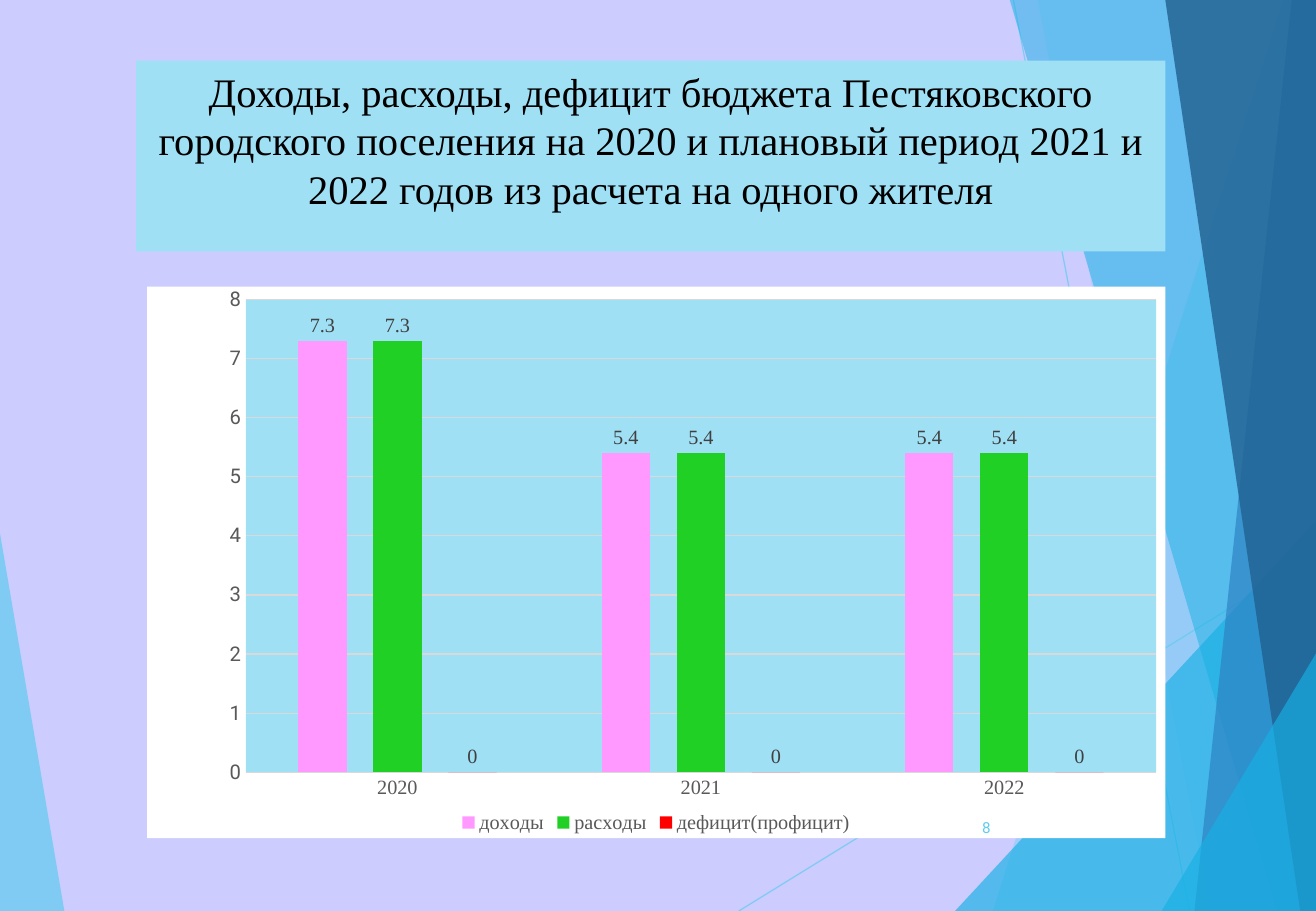
"""Build the slide on income, spending and deficit per resident."""
import lxml.etree
import pptx
import pptx.chart.data
import pptx.dml.color
import pptx.enum.chart
import pptx.enum.shapes
import pptx.enum.text
import pptx.oxml
import pptx.oxml.ns
import pptx.util

Inches = pptx.util.Inches
Pt = pptx.util.Pt
RGBColor = pptx.dml.color.RGBColor
qn = pptx.oxml.ns.qn

LAVENDER = RGBColor(0xCC, 0xCC, 0xFF)
SKY = RGBColor(0x5F, 0xCB, 0xEF)
CYAN = RGBColor(0x17, 0xB0, 0xE4)
BLUE = RGBColor(0x2E, 0x83, 0xC3)
NAVY = RGBColor(0x22, 0x62, 0x92)
PALE = RGBColor(0x9F, 0xE0, 0xF5)
PINK = RGBColor(0xFF, 0x99, 0xFF)
GREEN = RGBColor(0x20, 0xD0, 0x24)
RED = RGBColor(0xFF, 0x00, 0x00)
BLACK = RGBColor(0x00, 0x00, 0x00)
WHITE = RGBColor(0xFF, 0xFF, 0xFF)
DARK_GRAY = RGBColor(0x40, 0x40, 0x40)
GRAY = RGBColor(0x59, 0x59, 0x59)
LIGHT_GRAY = RGBColor(0xD9, 0xD9, 0xD9)
SERIF = "Times New Roman"
SANS = "Roboto"
WIDTH, HEIGHT = 10.83, 7.5


def set_font(font, name, size, color):
    for key, value in {"name": name, "size": Pt(size)}.items():
        setattr(font, key, value)
    font.color.rgb = color


def set_opacity(shape, percent):
    for color in shape.element.spPr.iter(qn("a:srgbClr")):
        lxml.etree.SubElement(color, qn("a:alpha")).set("val", str(percent * 1000))


deck = pptx.Presentation()
deck.slide_width = Inches(WIDTH)
deck.slide_height = Inches(HEIGHT)
page = deck.slides.add_slide(deck.slide_layouts[5])
page.background.fill.solid()
page.background.fill.fore_color.rgb = LAVENDER

rays = [((6.08, HEIGHT), (WIDTH, 4.57)), ((8.34, 0), (9.79, HEIGHT))]
for start, end in rays:
    ray = page.shapes.add_connector(
        pptx.enum.shapes.MSO_CONNECTOR.STRAIGHT,
        *[Inches(value) for value in start + end],
    )
    ray.line.color.rgb = SKY
    ray.line.width = Pt(0.75)
    set_opacity(ray, 70)
    lxml.etree.SubElement(ray.element.spPr, qn("a:effectLst"))

top_right, bottom_right = (WIDTH, 0), (WIDTH, HEIGHT)
facets = [
    (SKY, 70, [(0, 4.39), (0.53, HEIGHT), (0, HEIGHT)]),
    (SKY, 36, [(10.56, 0), (8.17, HEIGHT), bottom_right, top_right]),
    (SKY, 20, [(8.54, 0), (9.96, HEIGHT), bottom_right, top_right]),
    (CYAN, 66, [(7.86, HEIGHT), (WIDTH, 4.29), bottom_right]),
    (CYAN, 50, [(8.31, 0), (10.51, HEIGHT), bottom_right, top_right]),
    (BLUE, 70, [(10.63, 0), (9.83, HEIGHT), bottom_right, top_right]),
    (NAVY, 82, [(9.59, 0), (10.7, HEIGHT), bottom_right, top_right]),
    (CYAN, 66, [(9.56, HEIGHT), (WIDTH, 5.38), bottom_right]),
]
for color, opacity, corners in facets:
    points = [(Inches(x), Inches(y)) for x, y in corners]
    builder = page.shapes.build_freeform(*points[0])
    builder.add_line_segments(points[1:])
    facet = builder.convert_to_shape()
    facet.shadow.inherit = False
    facet.fill.solid()
    facet.fill.fore_color.rgb = color
    facet.line.fill.background()
    set_opacity(facet, opacity)

title = page.shapes.title
page.shapes.element.append(title.element)
title_place = {"left": 1.12, "top": 0.5, "width": 8.47, "height": 1.57}
for key, value in title_place.items():
    setattr(title, key, Inches(value))
title.fill.solid()
title.fill.fore_color.rgb = PALE
frame = title.text_frame
frame.text = (
    "Доходы, расходы, дефицит бюджета Пестяковского городского поселения "
    "на 2020 и плановый период 2021 и 2022 годов из расчета на одного жителя"
)
frame_format = {
    "word_wrap": True,
    "auto_size": pptx.enum.text.MSO_AUTO_SIZE.NONE,
    "vertical_anchor": pptx.enum.text.MSO_ANCHOR.TOP,
}
for key, value in frame_format.items():
    setattr(frame, key, value)
para = frame.paragraphs[0]
para.alignment = pptx.enum.text.PP_ALIGN.CENTER
set_font(para.runs[0].font, SERIF, 24, BLACK)

budget = pptx.chart.data.CategoryChartData()
budget.categories = ["2020", "2021", "2022"]
budget.add_series("доходы", [7.3, 5.4, 5.4])
budget.add_series("расходы", [7.3, 5.4, 5.4])
budget.add_series("дефицит(профицит)", [0, 0, 0])
chart = page.shapes.add_chart(
    pptx.enum.chart.XL_CHART_TYPE.COLUMN_CLUSTERED,
    Inches(1.21), Inches(2.36), Inches(8.38), Inches(4.54), budget,
).chart
set_font(chart.font, SANS, 10, BLACK)
chart.has_title = False
chart.has_legend = True
chart.legend.position = pptx.enum.chart.XL_LEGEND_POSITION.BOTTOM
chart.legend.include_in_layout = False
set_font(chart.legend.font, SERIF, 12, GRAY)

plot = chart.plots[0]
for key, value in {"gap_width": 219, "overlap": -56, "vary_by_categories": False}.items():
    setattr(plot, key, value)
for series, color in zip(plot.series, [PINK, GREEN, RED]):
    series.format.fill.solid()
    series.format.fill.fore_color.rgb = color
    series.invert_if_negative = False
    labels = series.data_labels
    labels.show_value = True
    labels.position = pptx.enum.chart.XL_LABEL_POSITION.OUTSIDE_END
    set_font(labels.font, SERIF, 12, DARK_GRAY)

for axis, font_name in [(chart.category_axis, SERIF), (chart.value_axis, SANS)]:
    axis.major_tick_mark = pptx.enum.chart.XL_TICK_MARK.NONE
    axis.minor_tick_mark = pptx.enum.chart.XL_TICK_MARK.NONE
    set_font(axis.tick_labels.font, font_name, 12, GRAY)
for key, value in {"minimum_scale": 0, "maximum_scale": 8, "major_unit": 1}.items():
    setattr(chart.value_axis, key, value)
chart.value_axis.format.line.fill.background()
for line in [chart.category_axis.format.line, chart.value_axis.major_gridlines.format.line]:
    line.color.rgb = LIGHT_GRAY
    line.width = Pt(0.75)

chart_body = chart.element.find(qn("c:chart"))
plot_area = chart_body.find(qn("c:plotArea"))
for anchor, color in [(chart_body, WHITE), (plot_area[-1], PALE)]:
    anchor.addnext(pptx.oxml.parse_xml(
        f'<c:spPr {pptx.oxml.ns.nsdecls("c", "a")}><a:solidFill><a:srgbClr val="{color}"/>'
        "</a:solidFill><a:ln><a:noFill/></a:ln></c:spPr>"
    ))
for old_layout in plot_area.findall(qn("c:layout")):
    plot_area.remove(old_layout)
layout = lxml.etree.Element(qn("c:layout"))
plot_area.insert(0, layout)
manual = lxml.etree.SubElement(layout, qn("c:manualLayout"))
plot_place = {
    "layoutTarget": "inner", "xMode": "edge", "yMode": "edge",
    "x": 0.097, "y": 0.023, "w": 0.894, "h": 0.858,
}
for tag, value in plot_place.items():
    lxml.etree.SubElement(manual, qn(f"c:{tag}")).set("val", str(value))

number_box = page.shapes.add_textbox(Inches(7.64), Inches(6.61), Inches(0.61), Inches(0.4))
number_box.text_frame.word_wrap = True
number_box.text_frame.vertical_anchor = pptx.enum.text.MSO_ANCHOR.MIDDLE
para = number_box.text_frame.paragraphs[0]
para.alignment = pptx.enum.text.PP_ALIGN.RIGHT
span = para.add_run()
span.text = "8"
set_font(span.font, SANS, 9, SKY)

deck.save("out.pptx")
